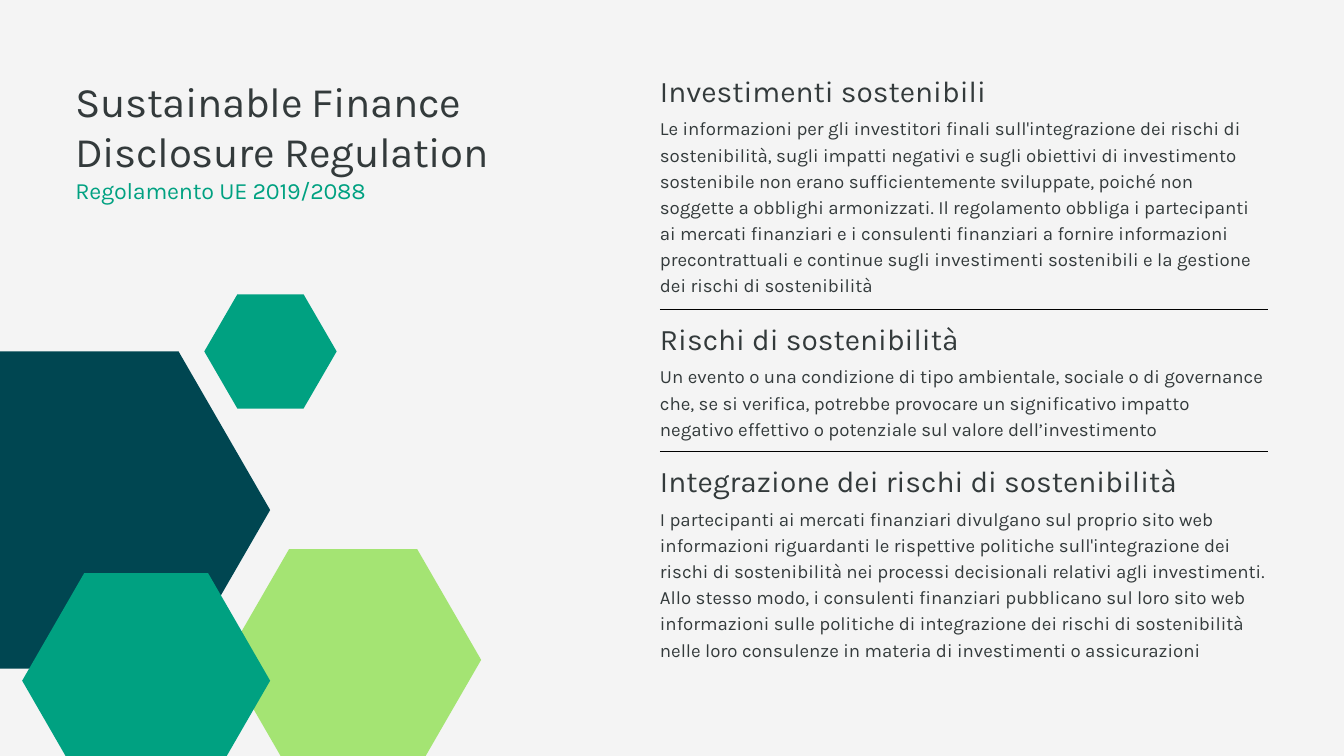
from pptx import Presentation
from pptx.dml.color import RGBColor
from pptx.enum.shapes import MSO_CONNECTOR, MSO_SHAPE
from pptx.enum.text import MSO_ANCHOR, MSO_AUTO_SIZE, PP_ALIGN
from pptx.oxml.ns import qn
from pptx.util import Inches, Pt
from lxml.etree import SubElement

BACKGROUND = RGBColor(0xF4, 0xF4, 0xF4)
INK = RGBColor(0x33, 0x3A, 0x3B)
BLACK = RGBColor(0x00, 0x00, 0x00)
PETROL = RGBColor(0x00, 0x46, 0x51)
LIME = RGBColor(0xA4, 0xE4, 0x73)
GREEN = RGBColor(0x00, 0xA1, 0x81)
FONT = "Karla"

TITLE = "Sustainable Finance Disclosure Regulation"
SUBTITLE = "Regolamento UE 2019/2088"

SECTIONS = [
    (1.08, 2.68, "Investimenti sostenibili",
     "Le informazioni per gli investitori finali sull'integrazione dei rischi di sostenibilità, "
     "sugli impatti negativi e sugli obiettivi di investimento sostenibile non erano "
     "sufficientemente sviluppate, poiché non soggette a obblighi armonizzati. Il regolamento "
     "obbliga i partecipanti ai mercati finanziari e i consulenti finanziari a fornire "
     "informazioni precontrattuali e continue sugli investimenti sostenibili e la gestione dei "
     "rischi di sostenibilità"),
    (4.77, 1.14, "Rischi di sostenibilità",
     "Un evento o una condizione di tipo ambientale, sociale o di governance che, se si verifica, "
     "potrebbe provocare un significativo impatto negativo effettivo o potenziale sul valore "
     "dell’investimento"),
    (6.89, 2.31, "Integrazione dei rischi di sostenibilità",
     "I partecipanti ai mercati finanziari divulgano sul proprio sito web informazioni "
     "riguardanti le rispettive politiche sull'integrazione dei rischi di sostenibilità nei "
     "processi decisionali relativi agli investimenti. Allo stesso modo, i consulenti finanziari "
     "pubblicano sul loro sito web informazioni sulle politiche di integrazione dei rischi di "
     "sostenibilità nelle loro consulenze in materia di investimenti o assicurazioni"),
]
COLUMN_LEFT, COLUMN_WIDTH = 9.82, 9.05
HEADING_HEIGHT, BODY_OFFSET = 0.54, 0.61
DIVIDER_TOPS = [4.61, 6.71]

HEXAGONS = [
    (-1.43, 5.23, 5.45, 4.72, PETROL),
    (3.35, 8.17, 3.81, 3.3, LIME),
    (3.04, 4.38, 1.97, 1.7, GREEN),
    (0.33, 8.53, 3.69, 3.2, GREEN),
]


def fill_text(shape, lines):
    frame = shape.text_frame
    frame.word_wrap = True
    frame.auto_size = MSO_AUTO_SIZE.NONE
    frame.vertical_anchor = MSO_ANCHOR.TOP
    frame.margin_left = frame.margin_right = frame.margin_top = frame.margin_bottom = 0
    frame.text = "\n".join(line[0] for line in lines)
    for paragraph, (_, size, spacing, color, tracking) in zip(frame.paragraphs, lines):
        paragraph.alignment = PP_ALIGN.LEFT
        paragraph.line_spacing = Pt(spacing)
        paragraph.space_before = Pt(0)
        for run in paragraph.runs:
            run.font.name = FONT
            run.font.size = Pt(size)
            run.font.color.rgb = color
            if tracking:
                run._r.get_or_add_rPr().set("spc", str(tracking))


def add_title(slide):
    title = slide.shapes.title
    title.left, title.top = Inches(1.12), Inches(1.12)
    title.width, title.height = Inches(7.82), Inches(1.91)
    fill_text(title, [(TITLE, 45, 54, INK, -40), (SUBTITLE, 25, 30, GREEN, -20)])


def add_hexagon(slide, left, top, width, height, color):
    hexagon = slide.shapes.add_shape(
        MSO_SHAPE.HEXAGON, Inches(left), Inches(top), Inches(width), Inches(height))
    hexagon.adjustments[0] = width / height / 4
    hexagon.shadow.inherit = False
    hexagon.fill.solid()
    hexagon.fill.fore_color.rgb = color
    hexagon.line.fill.background()


def add_section(slide, top, body_height, heading, body):
    parts = [
        (top, HEADING_HEIGHT, (heading, 32, 38.4, INK, 0)),
        (top + BODY_OFFSET, body_height, (body, 20, 28, INK, 0)),
    ]
    for part_top, height, line in parts:
        box = slide.shapes.add_textbox(
            Inches(COLUMN_LEFT), Inches(part_top), Inches(COLUMN_WIDTH), Inches(height))
        fill_text(box, [line])


def add_divider(slide, top):
    divider = slide.shapes.add_connector(
        MSO_CONNECTOR.STRAIGHT, Inches(COLUMN_LEFT), Inches(top),
        Inches(COLUMN_LEFT + COLUMN_WIDTH), Inches(top))
    divider.line.color.rgb = BLACK
    divider.line.width = Pt(0.75)
    SubElement(divider._element.spPr, qn("a:effectLst"))


def main():
    presentation = Presentation()
    presentation.slide_width = Inches(20)
    presentation.slide_height = Inches(11.25)
    slide = presentation.slides.add_slide(presentation.slide_layouts[5])
    slide.background.fill.solid()
    slide.background.fill.fore_color.rgb = BACKGROUND

    add_title(slide)
    for hexagon in HEXAGONS:
        add_hexagon(slide, *hexagon)
    for section in SECTIONS:
        add_section(slide, *section)
    for top in DIVIDER_TOPS:
        add_divider(slide, top)

    presentation.save("out.pptx")


if __name__ == "__main__":
    main()
